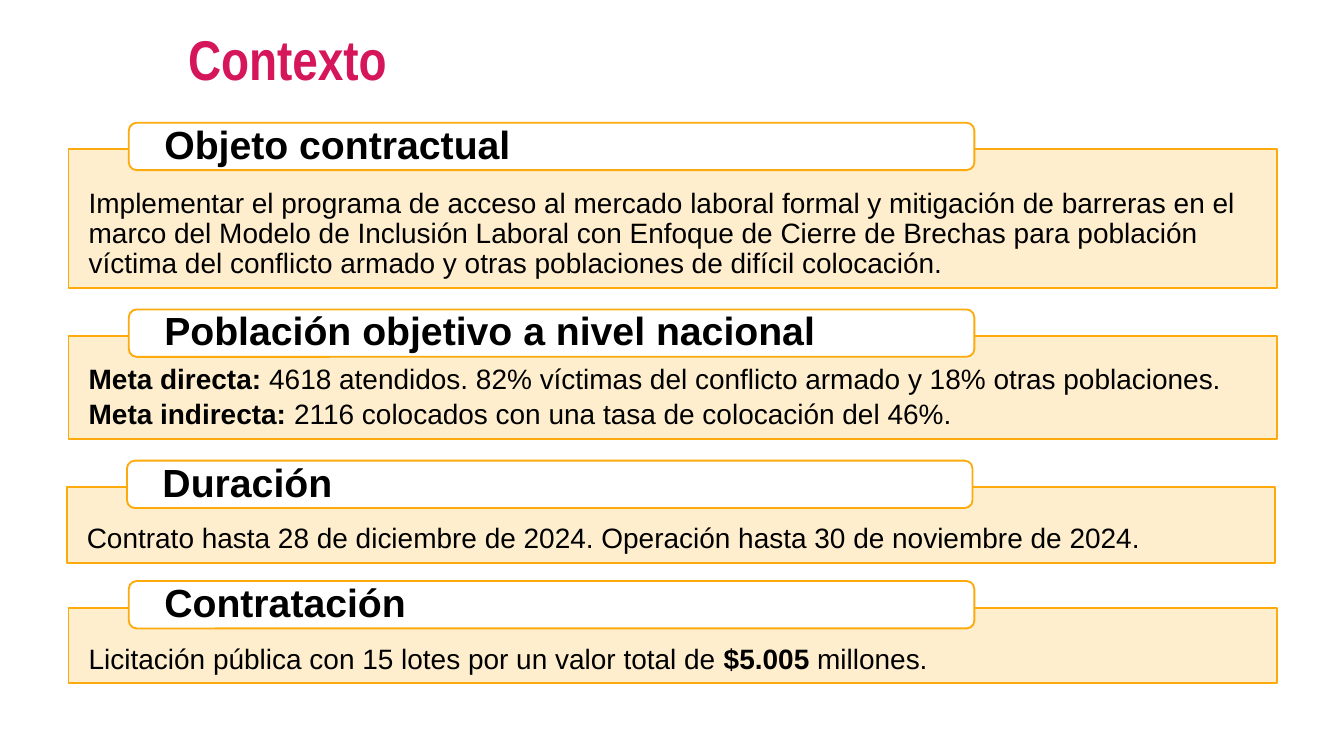
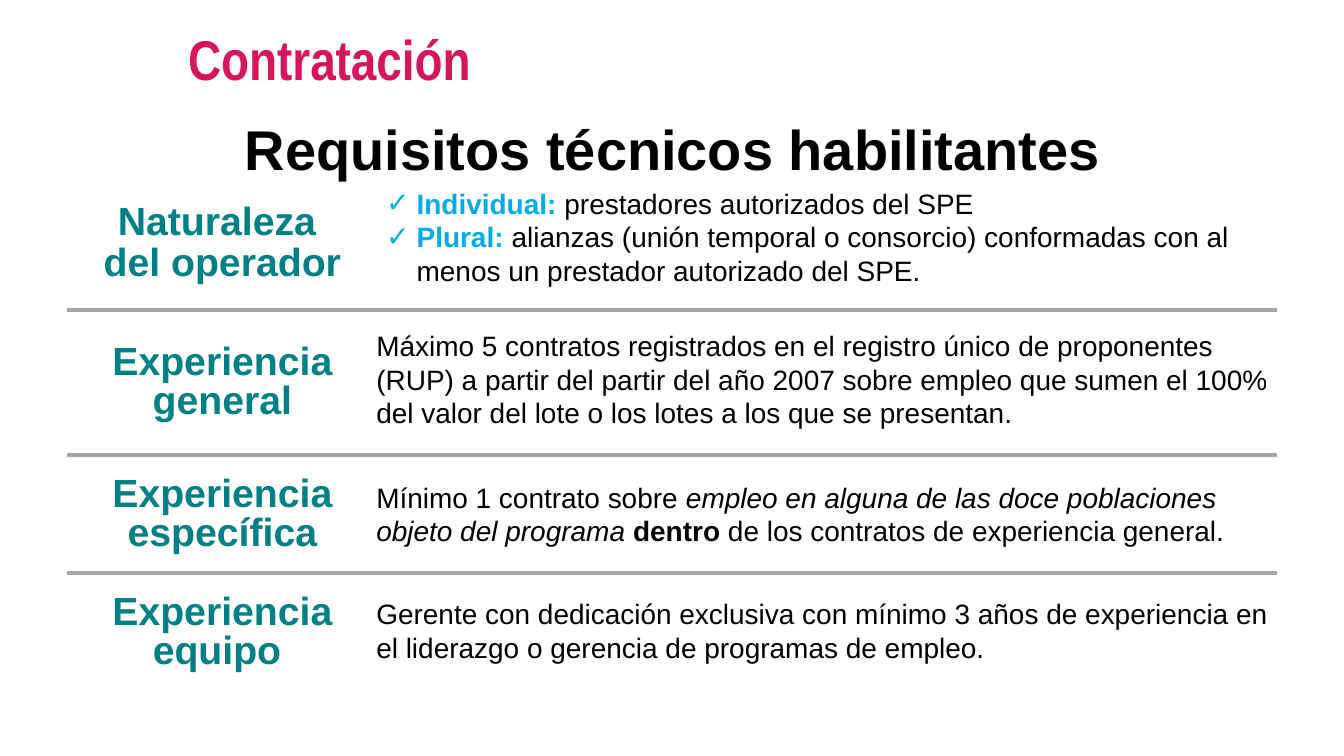
from lxml import etree
from pptx import Presentation
from pptx.dml.color import RGBColor
from pptx.enum.shapes import MSO_CONNECTOR, MSO_SHAPE
from pptx.enum.text import MSO_ANCHOR, MSO_AUTO_SIZE, PP_ALIGN
from pptx.oxml.ns import qn
from pptx.util import Pt

LEFT, CENTER = PP_ALIGN.LEFT, PP_ALIGN.CENTER
TOP, MIDDLE, BOTTOM = MSO_ANCHOR.TOP, MSO_ANCHOR.MIDDLE, MSO_ANCHOR.BOTTOM
RECTANGLE, ROUNDED = MSO_SHAPE.RECTANGLE, MSO_SHAPE.ROUNDED_RECTANGLE

# Shared look
BLACK, WHITE, GRAY = "000000", "FFFFFF", "A5A5A5"
MAGENTA, AMBER, TEAL, CYAN = "D6165B", "FDAA0C", "007F85", "00ABE3"
BODY_SIZE, HEADING_SIZE, TITLE_SIZE = 15, 21, 30
BOLD, ITALIC, TERM = {"bold": True}, {"italic": True}, {"bold": True, "color": CYAN}
TITLE_ONLY, TITLE_AND_BODY = 5, 1

# Slide 1 geometry
PANEL_LEFT, PANEL_WIDTH = 36.7, 647.4
HEADING_INDENT, HEADING_RISE = 32.3, 14.2
HEADING_WIDTH, HEADING_HEIGHT = 453, 25.4

# Slide 2 geometry
LABEL_LEFT, LABEL_WIDTH, LABEL_HEIGHT = 36, 166.3, 43.4
DETAIL_LEFT, DETAIL_WIDTH = 201.6, 485.3
RULE_LEFT, RULE_RIGHT = 36, 684


def rgb(color):
    return RGBColor.from_string(color)


def place(shape, left, top, width, height):
    shape.left, shape.top = Pt(left), Pt(top)
    shape.width, shape.height = Pt(width), Pt(height)


def add_check_mark(paragraph):
    properties = paragraph._p.get_or_add_pPr()
    properties.set("marL", str(Pt(21.6)))
    properties.set("indent", str(-Pt(16.4)))
    mark_color = etree.SubElement(properties, qn("a:buClr"))
    etree.SubElement(mark_color, qn("a:srgbClr"), val=CYAN)
    etree.SubElement(properties, qn("a:buFont"), typeface="Arial")
    etree.SubElement(properties, qn("a:buChar"), char="✓")


def write(shape, paragraphs, size, color=BLACK, bold=False, font="Arial", align=LEFT,
          anchor=TOP, insets=(7.2, 3.6, 7.2, 3.6), spacing=None, before=0, after=0,
          checked=False):
    """Fill a shape with paragraphs, each a list of (text, style) runs."""
    frame = shape.text_frame
    frame.word_wrap = True
    frame.auto_size = MSO_AUTO_SIZE.NONE
    frame.vertical_anchor = anchor
    (frame.margin_left, frame.margin_top,
     frame.margin_right, frame.margin_bottom) = map(Pt, insets)
    for index, runs in enumerate(paragraphs):
        paragraph = frame.add_paragraph() if index else frame.paragraphs[0]
        if checked:
            add_check_mark(paragraph)
        paragraph.alignment = align
        paragraph.space_before = Pt(before if index else 0)
        paragraph.space_after = Pt(after)
        if spacing:
            paragraph.line_spacing = spacing
        for text, style in runs:
            run = paragraph.add_run()
            run.text = text
            run.font.name = font
            run.font.size = Pt(size)
            run.font.bold = style.get("bold", bold)
            run.font.italic = style.get("italic", False)
            run.font.color.rgb = rgb(style.get("color", color))


def add_text(slide, left, top, width, height, paragraphs, size, **style):
    box = slide.shapes.add_textbox(Pt(left), Pt(top), Pt(width), Pt(height))
    write(box, paragraphs, size, **style)


def add_box(slide, kind, left, top, width, height, fill, opacity=None):
    box = slide.shapes.add_shape(kind, Pt(left), Pt(top), Pt(width), Pt(height))
    box.shadow.inherit = False
    box.fill.solid()
    box.fill.fore_color.rgb = rgb(fill)
    if opacity:
        fill_color = box._element.spPr.find(qn("a:solidFill"))[0]
        etree.SubElement(fill_color, qn("a:alpha"), val=str(opacity * 1000))
    box.line.color.rgb = rgb(AMBER)
    box.line.width = Pt(1)
    return box


def add_rule(slide, y):
    rule = slide.shapes.add_connector(MSO_CONNECTOR.STRAIGHT, Pt(RULE_LEFT), Pt(y),
                                      Pt(RULE_RIGHT), Pt(y))
    rule.line.color.rgb = rgb(GRAY)
    rule.line.width = Pt(2.25)
    etree.SubElement(rule._element.spPr, qn("a:effectLst"))


def add_titled_slide(deck, layout, title):
    slide = deck.slides.add_slide(deck.slide_layouts[layout])
    place(slide.shapes.title, 93.6, 9.4, 538.6, 43.9)
    write(slide.shapes.title, [[(title, {})]], TITLE_SIZE, color=MAGENTA, bold=True,
          font="Arial Narrow")
    return slide


def add_section(slide, heading, paragraphs, top, height, shift=0):
    """Tinted panel with a heading tab over its upper edge."""
    left = PANEL_LEFT + shift
    panel = add_box(slide, RECTANGLE, left, top, PANEL_WIDTH, height, AMBER, opacity=20)
    write(panel, paragraphs, BODY_SIZE, anchor=BOTTOM, insets=(10.8, 0, 10.8, 4.3),
          spacing=0.9, after=2.5)
    tab = add_box(slide, ROUNDED, left + HEADING_INDENT, top - HEADING_RISE,
                  HEADING_WIDTH, HEADING_HEIGHT, WHITE)
    write(tab, [[(heading, {})]], HEADING_SIZE, bold=True, anchor=MIDDLE,
          insets=(17.8, 0.5, 17.8, 0.5), spacing=0.9)


def build_context(deck):
    slide = add_titled_slide(deck, TITLE_ONLY, "Contexto")
    add_section(slide, "Objeto contractual", [[
        ("Implementar el programa de acceso al mercado laboral formal y mitigación de "
         "barreras en el marco del Modelo de Inclusión Laboral con Enfoque de Cierre de "
         "Brechas para población víctima del conflicto armado y otras poblaciones de "
         "difícil colocación.", {})]], 80, 74.2)
    add_section(slide, "Población objetivo a nivel nacional", [
        [("Meta directa: ", BOLD),
         ("4618 atendidos. 82% víctimas del conflicto armado y 18% otras poblaciones.", {})],
        [("Meta indirecta:", BOLD),
         (" 2116 colocados con una tasa de colocación del 46%.", {})]], 180, 55.2)
    add_section(slide, "Duración", [[
        ("Contrato hasta 28 de diciembre de 2024. Operación hasta 30 de noviembre de 2024.",
         {})]], 261, 40.5, shift=-1)
    add_section(slide, "Contratación", [[
        ("Licitación pública con 15 lotes por un valor total de ", {}),
        ("$5.005 ", BOLD), ("millones.", {})]], 325.5, 40.5)


def build_hiring(deck):
    slide = add_titled_slide(deck, TITLE_AND_BODY, "Contratación")
    add_text(slide, 31, 57.6, 658.8, 43.9, [[("Requisitos técnicos habilitantes", {})]],
             TITLE_SIZE, bold=True, align=CENTER)

    # Checklist of operator types
    operators = slide.placeholders[1]
    place(operators, DETAIL_LEFT, 99.4, DETAIL_WIDTH, 54.7)
    write(operators, [
        [("Individual: ", TERM), ("prestadores autorizados del SPE", {})],
        [("Plural: ", TERM),
         ("alianzas (unión temporal o consorcio) conformadas con al menos un prestador "
          "autorizado del SPE.", {})]],
        BODY_SIZE, anchor=MIDDLE, insets=(0, 0, 0, 0), checked=True)

    # Requirement labels: top and lines
    labels = [
        (108.7, ["Naturaleza ", "del operador"]),
        (183.6, ["Experiencia general"]),
        (254.2, ["Experiencia específica"]),
        (317.5, ["Experiencia equipo "]),
    ]
    for top, lines in labels:
        add_text(slide, LABEL_LEFT, top, LABEL_WIDTH, LABEL_HEIGHT,
                 [[(line, {})] for line in lines], HEADING_SIZE, color=TEAL, bold=True,
                 align=CENTER, insets=(0, 0.7, 0, 0), spacing=Pt(21), before=0.8)

    # Requirement details: top, height and runs
    details = [
        (175.7, 54.7, [
            ("Máximo 5 contratos registrados en el registro único de proponentes (RUP) a "
             "partir del partir del año 2007 sobre empleo que sumen el 100% del valor del "
             "lote o los lotes a los que se presentan.", {})]),
        (257, 36.7, [
            ("Mínimo 1 contrato sobre ", {}),
            ("empleo en alguna de las doce poblaciones objeto del programa ", ITALIC),
            ("dentro ", BOLD), ("de los contratos de experiencia general.", {})]),
        (319, 37.4, [
            ("Gerente con dedicación exclusiva con mínimo 3 años de experiencia en el "
             "liderazgo o gerencia de programas de empleo.", {})]),
    ]
    for top, height, runs in details:
        add_text(slide, DETAIL_LEFT, top, DETAIL_WIDTH, height, [runs], BODY_SIZE,
                 anchor=MIDDLE, insets=(0, 0, 0, 0))

    for y in (166.2, 243.9, 306.9):
        add_rule(slide, y)


def main():
    deck = Presentation()
    deck.slide_width, deck.slide_height = Pt(720), Pt(405)
    build_context(deck)
    build_hiring(deck)
    deck.save("out.pptx")


if __name__ == "__main__":
    main()
